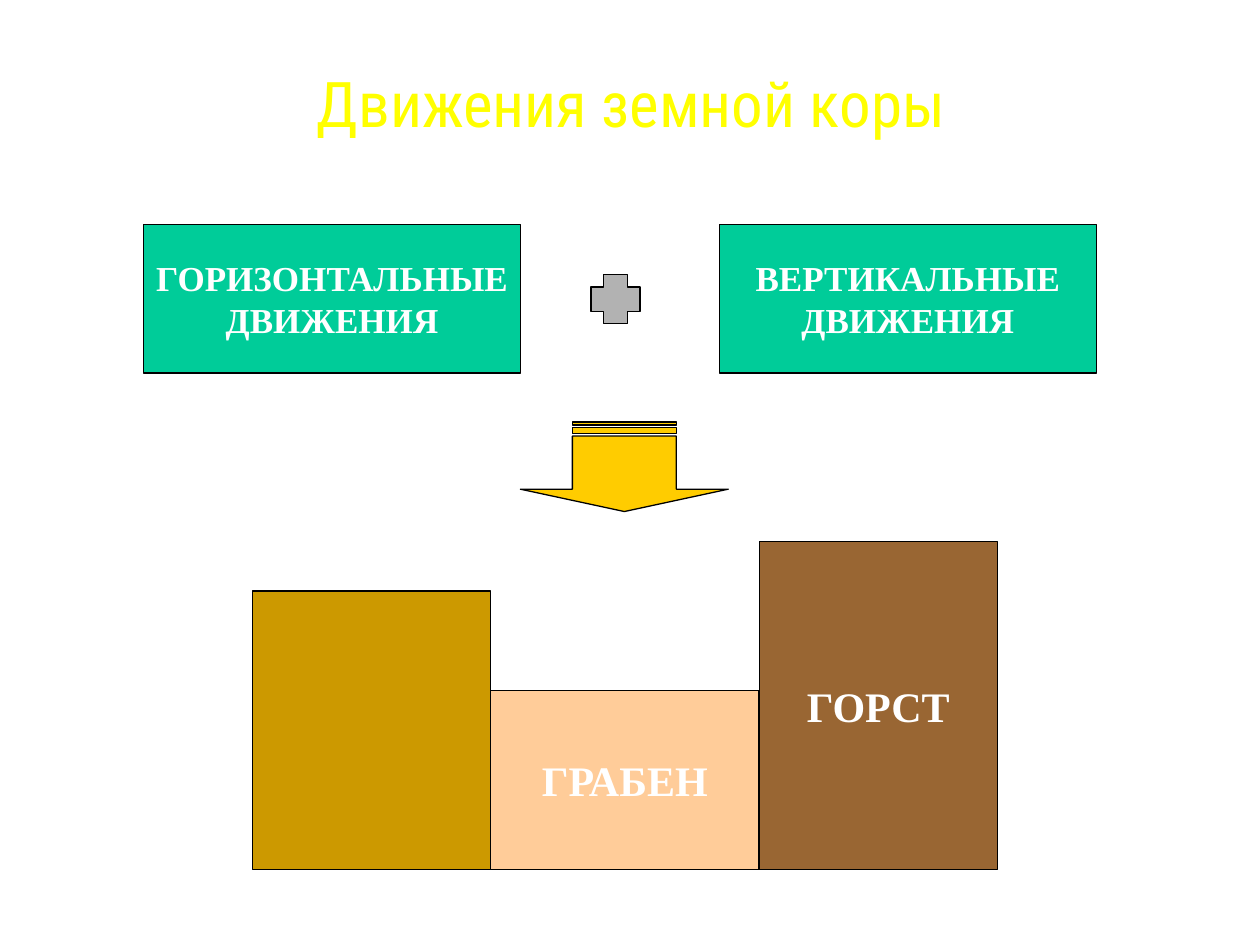
from dataclasses import dataclass

from pptx import Presentation
from pptx.dml.color import RGBColor
from pptx.enum.shapes import MSO_SHAPE
from pptx.enum.text import MSO_ANCHOR, MSO_AUTO_SIZE, PP_ALIGN
from pptx.util import Inches, Pt

RECTANGLE = MSO_SHAPE.RECTANGLE
PLUS = MSO_SHAPE.CROSS
STRIPED_ARROW = MSO_SHAPE.STRIPED_RIGHT_ARROW
CENTER = PP_ALIGN.CENTER
TOP, MIDDLE = MSO_ANCHOR.TOP, MSO_ANCHOR.MIDDLE
NO_AUTOFIT = MSO_AUTO_SIZE.NONE
TITLE_ONLY = 5


@dataclass(frozen=True)
class Theme:
    title_font: str = "Roboto Condensed"
    body_font: str = "Times New Roman"
    title_size: int = 36
    movement_size: int = 20
    block_size: int = 24
    line_width: float = 0.75
    title: str = "FFFF00"
    text: str = "FFFFFF"
    outline: str = "000000"
    movement: str = "00CC99"
    plus: str = "B2B2B2"
    arrow: str = "FFCC00"
    plateau: str = "CC9900"
    graben: str = "FFCC99"
    horst: str = "996633"


class SlideBuilder:
    """Places elements on a grid of 100 columns by 75 rows."""

    COLUMNS, ROWS = 100, 75

    def __init__(self, presentation, theme):
        self.theme = theme
        self.column = presentation.slide_width / self.COLUMNS
        self.row = presentation.slide_height / self.ROWS
        self.slide = presentation.slides.add_slide(presentation.slide_layouts[TITLE_ONLY])

    def box(self, left, top, width, height):
        return (round(left * self.column), round(top * self.row),
                round(width * self.column), round(height * self.row))

    def set_text(self, shape, text, font_name, size, color, anchor=MIDDLE, bold=False):
        frame = shape.text_frame
        frame.text = text
        frame.word_wrap = False
        frame.auto_size = NO_AUTOFIT
        frame.vertical_anchor = anchor
        for paragraph in frame.paragraphs:
            paragraph.alignment = CENTER
            paragraph.line_spacing = 1.0
            for run in paragraph.runs:
                run.font.name = font_name
                run.font.size = Pt(size)
                run.font.bold = bold
                run.font.color.rgb = RGBColor.from_string(color)

    def title(self, text, *place):
        shape = self.slide.shapes.title
        shape.left, shape.top, shape.width, shape.height = self.box(*place)
        self.set_text(shape, text, self.theme.title_font, self.theme.title_size,
                      self.theme.title, anchor=TOP)
        shape.text_frame.margin_top = Inches(0.07)

    def shape(self, kind, color, *place, adjustments=()):
        shape = self.slide.shapes.add_shape(kind, *self.box(*place))
        shape.shadow.inherit = False
        shape.fill.solid()
        shape.fill.fore_color.rgb = RGBColor.from_string(color)
        shape.line.color.rgb = RGBColor.from_string(self.theme.outline)
        shape.line.width = Pt(self.theme.line_width)
        for index, value in enumerate(adjustments):
            shape.adjustments[index] = value
        return shape

    def label_box(self, text, size, color, *place):
        shape = self.shape(RECTANGLE, color, *place)
        if text:
            self.set_text(shape, text, self.theme.body_font, size, self.theme.text, bold=True)

    def down_arrow(self, color, left, top, width, height):
        # The preset points right, so its sides swap before the quarter turn
        arrow = self.shape(STRIPED_ARROW, color,
                           left + (width - height) / 2, top + (height - width) / 2,
                           height, width, adjustments=(0.5, 0.25))
        arrow.rotation = 90


def main():
    presentation = Presentation()
    presentation.slide_width, presentation.slide_height = Inches(10), Inches(7.5)
    theme = Theme()
    builder = SlideBuilder(presentation, theme)

    builder.title("Движения земной коры", 21.5, 4.4, 57.2, 7.9)

    # Two kinds of movement, joined by a plus
    movements = ("ГОРИЗОНТАЛЬНЫЕ\nДВИЖЕНИЯ", "ВЕРТИКАЛЬНЫЕ\nДВИЖЕНИЯ")
    for index, text in enumerate(movements):
        builder.label_box(text, theme.movement_size, theme.movement,
                          11.4 + index * 45.7, 17.8, 29.9, 11.8)
    builder.shape(PLUS, theme.plus, 46.9, 21.8, 3.9, 3.9, adjustments=(0.25,))

    # Arrow to the result
    builder.down_arrow(theme.arrow, 41.3, 33.5, 16.5, 7.1)

    # Crust blocks, side by side on one base line
    base, left = 69, 20.05
    blocks = (
        ("", theme.plateau, 18.9, 22.1),
        ("ГРАБЕН", theme.graben, 21.3, 14.2),
        ("ГОРСТ", theme.horst, 18.9, 26),
    )
    for text, color, width, height in blocks:
        builder.label_box(text, theme.block_size, color, left, base - height, width, height)
        left += width

    presentation.save("out.pptx")


if __name__ == "__main__":
    main()
